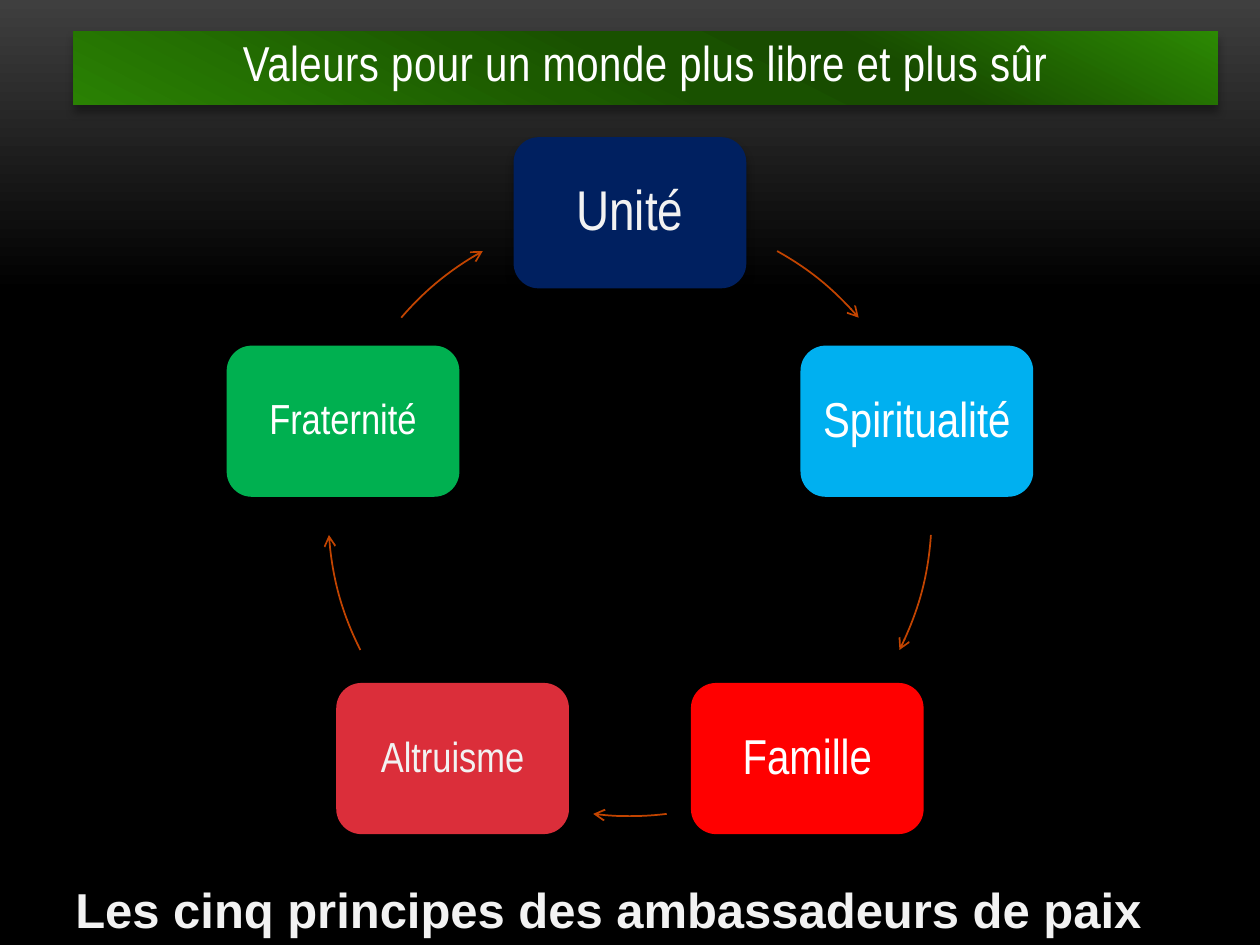
from dataclasses import dataclass
from math import cos, radians, sin

from lxml.etree import SubElement
from pptx import Presentation
from pptx.dml.color import RGBColor as RGB
from pptx.enum.shapes import MSO_SHAPE as Shape
from pptx.enum.text import MSO_ANCHOR as Anchor, MSO_AUTO_SIZE as AutoSize, PP_ALIGN as Align
from pptx.oxml.ns import qn
from pptx.util import Pt

COLORS = {
    "navy": "002060", "sky": "00B0F0", "red": "FF0000", "rose": "DB2E3A",
    "green": "00B050", "white": "FFFFFF", "light": "F2F2F2",
    "arrow": "C24400", "black": "000000", "gray": "3F3F3F",
    "leaf": "2C8903", "forest": "184C00", "moss": "195100",
    "fern": "1C5A00", "grass": "2A8103",
}
CX, CY, RADIUS = 360, 294, 172.4
BOX_W, BOX_H = 133, 86.4


@dataclass
class Value:
    text: str
    fill: str
    color: str
    size: int
    arc_start: float
    arc_end: float


VALUES = [
    Value("Unité", "navy", "light", 32, 299.2, 319.3),
    Value("Spiritualité", "sky", "white", 28, 3.9, 26.7),
    Value("Famille", "red", "white", 28, 83, 97),
    Value("Altruisme", "rose", "light", 24, 153.3, 176.1),
    Value("Fraternité", "green", "white", 24, 220.7, 240.8),
]


def rgb(name: str) -> RGB:
    return RGB.from_string(COLORS[name])


def set_gradient(fill, root, stops: list, angle: float) -> None:
    fill.gradient()
    fill.gradient_angle = 360 - angle
    gs_lst = next(root.iter(qn("a:gsLst")))
    for gs in list(gs_lst):
        gs_lst.remove(gs)
    for pos, name in stops:
        gs = SubElement(gs_lst, qn("a:gs"), pos=str(pos * 1000))
        SubElement(gs, qn("a:srgbClr"), val=COLORS[name])


def add_shadow(s) -> None:
    s.shadow.inherit = False
    effects = s._element.spPr.find(qn("a:effectLst"))
    shadow = SubElement(effects, qn("a:outerShdw"), blurRad=str(Pt(5)),
                        dist=str(Pt(4)), dir="5400000", rotWithShape="0")
    color = SubElement(shadow, qn("a:srgbClr"), val=COLORS["black"])
    SubElement(color, qn("a:alpha"), val="35000")


def write(tf, text: str, size: int, color: str, font: str = "Arial Narrow"):
    tf.word_wrap = True
    p = tf.paragraphs[0]
    r = p.add_run()
    r.text = text
    r.font.size = Pt(size)
    r.font.name = font
    r.font.color.rgb = rgb(color)
    return p, r


def add_value(slide, value: Value, angle: float) -> None:
    x = CX + RADIUS * cos(radians(angle)) - BOX_W / 2
    y = CY + RADIUS * sin(radians(angle)) - BOX_H / 2
    s = slide.shapes.add_shape(Shape.ROUNDED_RECTANGLE, Pt(x), Pt(y), Pt(BOX_W), Pt(BOX_H))
    s.fill.solid()
    s.fill.fore_color.rgb = rgb(value.fill)
    s.line.fill.background()
    add_shadow(s)
    tf = s.text_frame
    tf.margin_left = tf.margin_right = Pt(6)
    tf.vertical_anchor = Anchor.MIDDLE
    p, _ = write(tf, value.text, value.size, value.color)
    p.alignment = Align.CENTER
    p.line_spacing = 0.9


def add_arc(slide, start: float, end: float) -> None:
    s = slide.shapes.add_shape(Shape.ARC, Pt(CX - RADIUS), Pt(CY - RADIUS),
                               Pt(2 * RADIUS), Pt(2 * RADIUS))
    s.adjustments[0] = start * 0.6
    s.adjustments[1] = end * 0.6
    s.fill.background()
    s.shadow.inherit = False
    s.line.color.rgb = rgb("arrow")
    s.line.width = Pt(1)
    SubElement(s.line._get_or_add_ln(), qn("a:tailEnd"), type="arrow")


def add_title(slide) -> None:
    s = slide.shapes.add_shape(Shape.RECTANGLE, Pt(42), Pt(18), Pt(654), Pt(42))
    stops = [(0, "leaf"), (30, "forest"), (50, "moss"), (60, "fern"), (100, "grass")]
    set_gradient(s.fill, s._element, stops, 117)
    s.line.fill.background()
    add_shadow(s)
    tf = s.text_frame
    tf.margin_top = Pt(0.7)
    tf.vertical_anchor = Anchor.TOP
    p, r = write(tf, "Valeurs pour un monde plus libre et plus sûr", 28, "white")
    p.alignment = Align.CENTER
    r.font._element.set("spc", "30")


def add_caption(slide) -> None:
    s = slide.shapes.add_textbox(Pt(36), Pt(499), Pt(648), Pt(41))
    _, r = write(s.text_frame, "Les cinq principes des ambassadeurs de paix", 28, "light", "Arial")
    r.font.bold = True
    s.text_frame.auto_size = AutoSize.SHAPE_TO_FIT_TEXT


def main() -> None:
    prs = Presentation()
    prs.slide_width, prs.slide_height = Pt(720), Pt(540)
    slide = prs.slides.add_slide(prs.slide_layouts[6])
    set_gradient(slide.background.fill, slide._element,
                 [(0, "gray"), (31, "black"), (100, "black")], 90)
    for i, value in enumerate(VALUES):
        add_value(slide, value, -90 + i * 360 / len(VALUES))
        add_arc(slide, value.arc_start, value.arc_end)
    add_title(slide)
    add_caption(slide)
    prs.save("out.pptx")


if __name__ == "__main__":
    main()
